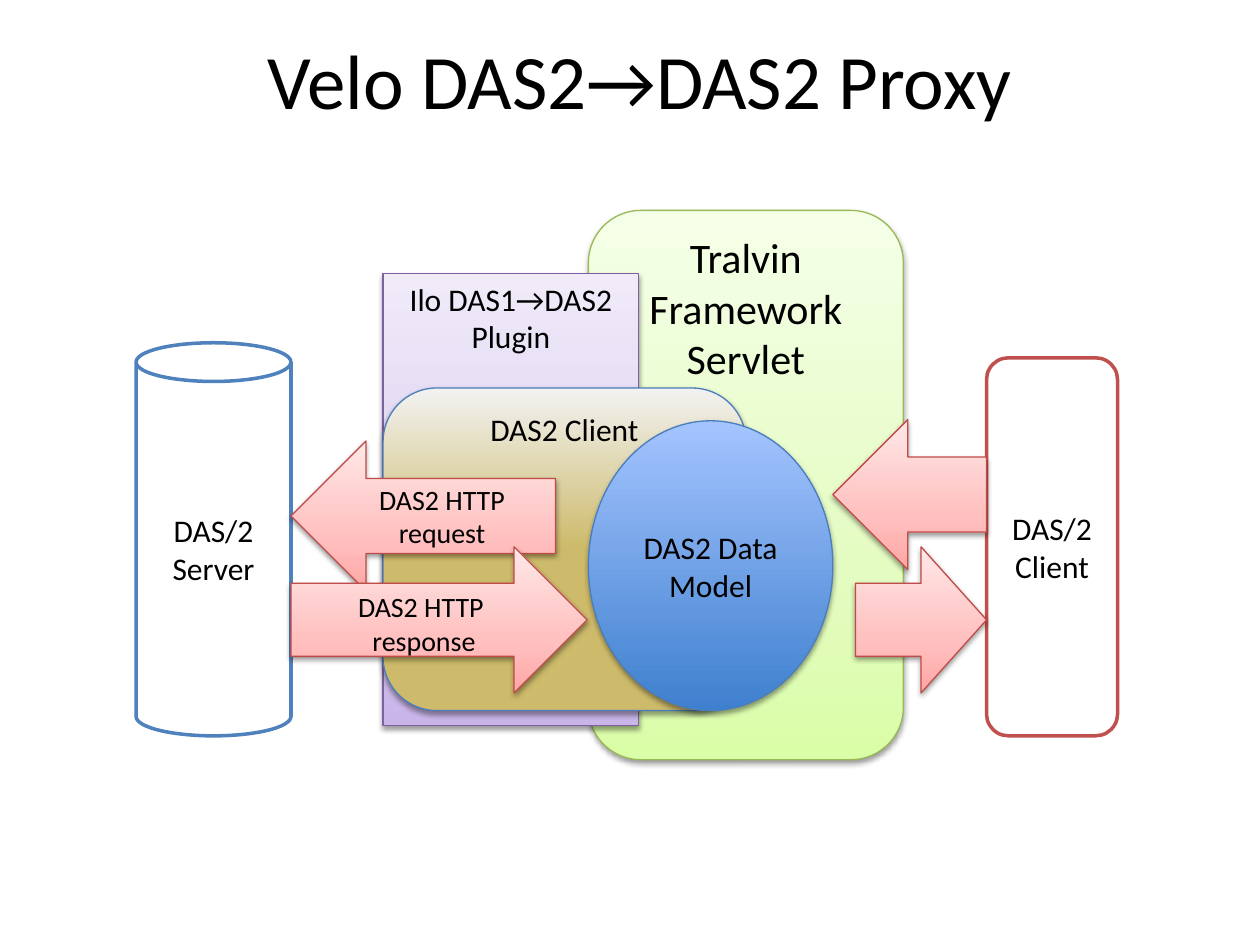
from lxml import etree
from pptx import Presentation
from pptx import util as u
from pptx.dml.color import RGBColor
from pptx.enum import shapes, text
from pptx.oxml import ns

HEX = {"black": "000000", "white": "FFFFFF", "blue": "4F81BD", "red": "C0504D",
       "navy": "4B7EBC", "lime": "98B955", "plum": "7D60A0", "rose": "BF4C48"}
# Gradient stops run from the bottom edge (0) to the top edge (100).
GRADS = {
    "green": [(0, "DAFDA7"), (35, "E4FCC2"), (100, "F5FFE7")],
    "lilac": [(0, "C9B5E8"), (35, "D8CBEE"), (100, "F0EAF9")],
    "tan": [(0, "CDBA6A"), (50, "CDBA6A"), (100, "F2F2F2")],
    "sky": [(0, "3F80CE"), (100, "A4C4FF")],
    "pink": [(0, "FFA6A5"), (35, "FFC0BF"), (100, "FFE7E7")],
}
KIND = shapes.MSO_SHAPE
TOP, MID = text.MSO_ANCHOR.TOP, text.MSO_ANCHOR.MIDDLE


def shade(shape, stops):
    """Fill with a vertical gradient and add a soft shadow below."""
    shape.fill.gradient()
    shape.fill.gradient_angle = 90
    props = shape._element.spPr
    group = props.find(".//" + ns.qn("a:gsLst"))
    for old in list(group):
        group.remove(old)
    for pos, tone in stops:
        stop = etree.SubElement(group, ns.qn("a:gs"), pos=str(pos * 1000))
        etree.SubElement(stop, ns.qn("a:srgbClr"), val=tone)
    drop = etree.SubElement(
        props.find(ns.qn("a:effectLst")), ns.qn("a:outerShdw"),
        blurRad=str(u.Pt(3.1)), dist=str(u.Pt(1.6)), dir="5400000", rotWithShape="0")
    tone = etree.SubElement(drop, ns.qn("a:srgbClr"), val=HEX["black"])
    etree.SubElement(tone, ns.qn("a:alpha"), val="38000")


def write(frame, words, size, anchor):
    frame.text = words
    frame.word_wrap = True
    frame.vertical_anchor = anchor
    form = {"name": "Calibri", "size": u.Pt(size)}
    for para in frame.paragraphs:
        para.alignment = text.PP_ALIGN.CENTER
        for key, value in form.items():
            setattr(para.font, key, value)
        para.font.color.rgb = RGBColor.from_string(HEX["black"])


deck = Presentation()
deck.slide_width, deck.slide_height = u.Inches(10), u.Inches(7.5)
slide = deck.slides.add_slide(deck.slide_layouts[5])

title = slide.shapes.title
place = {"left": 0.58, "top": 0, "width": 9, "height": 1.25}
for key, value in place.items():
    setattr(title, key, u.Inches(value))
write(title.text_frame, "Velo DAS2→DAS2 Proxy", 44, MID)

# Edges shared by neighbouring parts
SERVER, CLIENT = 2.31, 7.83
PLUGIN, MODEL = 3.04, 4.67
REPLY = 4.34

# kind, left, top, width, height, fill, line, words, size, anchor
parts = [
    (KIND.FLOWCHART_ALTERNATE_PROCESS, MODEL, 1.67, 2.5, 4.36, "green", "lime",
     "Tralvin Framework Servlet", 24, TOP),
    (KIND.RECTANGLE, PLUGIN, 2.17, 2.03, 3.59, "lilac", "plum",
     "Ilo DAS1→DAS2 Plugin", 18, TOP),
    (KIND.ROUNDED_RECTANGLE, PLUGIN, 3.08, 2.88, 2.56, "tan", "navy",
     "DAS2 Client", 18, TOP),
    (KIND.OVAL, MODEL, 3.34, 1.94, 2.3, "sky", "navy", "DAS2 Data Model", 18, MID),
    (KIND.CAN, 1.08, 2.72, 1.23, 3.12, "white", "blue", "DAS/2 Server", 18, MID),
    (KIND.ROUNDED_RECTANGLE, CLIENT, 2.84, 1.04, 3, "white", "red",
     "DAS/2 Client", 18, MID),
    (KIND.RIGHT_ARROW, 6.79, REPLY, 1.04, 1.16, "pink", "rose", "", 16, MID),
    (KIND.LEFT_ARROW, 6.61, 3.33, 1.22, 1.19, "pink", "rose", "", 16, MID),
    (KIND.LEFT_ARROW, SERVER, 3.5, 2.1, 1.19, "pink", "rose",
     "DAS2 HTTP request", 16, MID),
    (KIND.RIGHT_ARROW, SERVER, REPLY, 2.35, 1.16, "pink", "rose",
     "DAS2 HTTP\n response", 16, TOP),
]
for kind, left, top, width, height, fill, line, words, size, anchor in parts:
    box = [u.Inches(n) for n in (left, top, width, height)]
    shape = slide.shapes.add_shape(kind, *box)
    shape.shadow.inherit = False
    if fill in GRADS:
        shade(shape, GRADS[fill])
    else:
        shape.fill.solid()
        shape.fill.fore_color.rgb = RGBColor.from_string(HEX[fill])
    shape.line.color.rgb = RGBColor.from_string(HEX[line])
    shape.line.width = u.Pt(0.75 if fill in GRADS else 2)
    if words:
        write(shape.text_frame, words, size, anchor)

deck.save("out.pptx")
